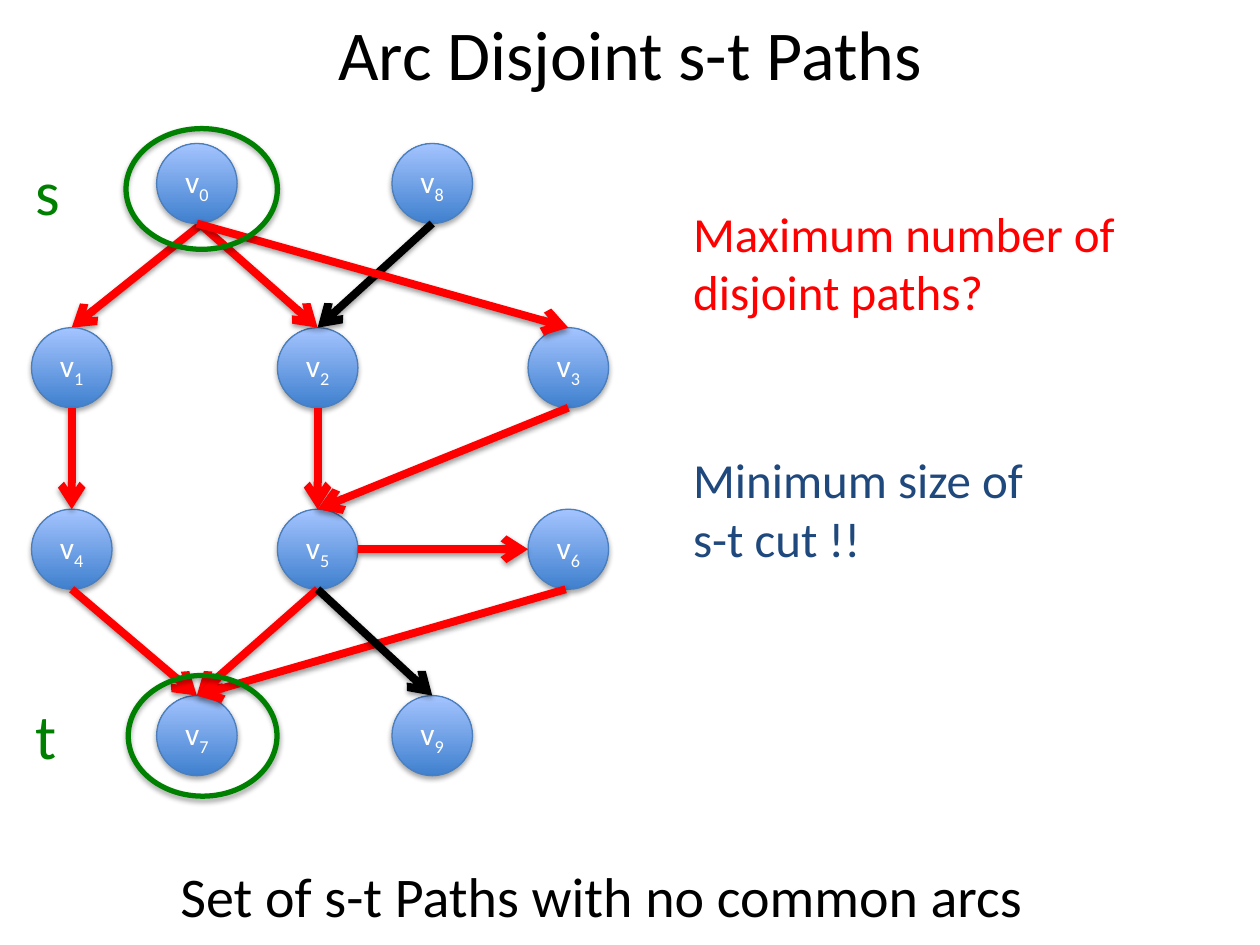
from lxml.etree import SubElement
from pptx import Presentation
from pptx.dml.color import RGBColor
from pptx.enum.shapes import MSO_CONNECTOR, MSO_SHAPE
from pptx.enum.text import MSO_ANCHOR, MSO_AUTO_SIZE, PP_ALIGN
from pptx.oxml.ns import qn
from pptx.util import Pt

HUES = {"black": "000000", "white": "FFFFFF", "red": "FF0000", "green": "008000",
        "navy": "1F497D", "edge": "4B7EBC", "deep": "3F80CE", "pale": "A4C4FF"}
WIDE, HIGH = 46, 45.75  # node size


class Board:
    font = "Calibri"

    def __init__(self, slide):
        self.slide = slide

    def hue(self, name):
        return RGBColor.from_string(HUES[name])

    def stroke(self, line, hue, width):
        line.color.rgb = self.hue(hue)
        line.width = Pt(width)

    def shade(self, item, drop, alpha):
        props = item._element.spPr
        box = props.find(qn("a:effectLst"))
        if box is None:
            box = SubElement(props, qn("a:effectLst"))
        cast = SubElement(box, qn("a:outerShdw"), blurRad=str(Pt(3.1)), dist=str(Pt(drop)),
                          dir="5400000", rotWithShape="0")
        tint = SubElement(cast, qn("a:srgbClr"), val=HUES["black"])
        SubElement(tint, qn("a:alpha"), val=str(alpha * 1000))

    def oval(self, x, y, w, h, hue, width):
        item = self.slide.shapes.add_shape(MSO_SHAPE.OVAL, Pt(x), Pt(y), Pt(w), Pt(h))
        item.shadow.inherit = False
        self.stroke(item.line, hue, width)
        self.shade(item, 1.8, 35)
        return item

    def run(self, para, text, size, hue):
        run = para.add_run()
        run.text = text
        run.font.name = self.font
        run.font.size = Pt(size)
        run.font.color.rgb = self.hue(hue)
        return run

    def node(self, num, mid, top):
        item = self.oval(mid - WIDE / 2, top, WIDE, HIGH, "edge", 0.75)
        item.fill.gradient()
        item.fill.gradient_angle = 90
        for stop, hue in zip(item.fill.gradient_stops, ("deep", "pale")):
            stop.color.rgb = self.hue(hue)
        frame = item.text_frame
        frame.vertical_anchor = MSO_ANCHOR.MIDDLE
        para = frame.paragraphs[0]
        para.alignment = PP_ALIGN.CENTER
        self.run(para, "v", 18, "white")
        sub = self.run(para, str(num), 18, "white")
        sub._r.get_or_add_rPr().set("baseline", "-25000")

    def ring(self, x, y, w, h):
        item = self.oval(x, y, w, h, "green", 3)
        item.rotation = 90
        item.fill.background()

    def arrow(self, start, end, hue):
        points = [Pt(n) for n in (*start, *end)]
        item = self.slide.shapes.add_connector(MSO_CONNECTOR.STRAIGHT, *points)
        self.stroke(item.line, hue, 4.5)
        SubElement(item.line._get_or_add_ln(), qn("a:tailEnd"), type="arrow")
        self.shade(item, 1.6, 38)

    def text(self, x, y, w, h, lines, size, hue, wrap=False, title=False):
        box = self.slide.shapes.add_textbox(Pt(x), Pt(y), Pt(w), Pt(h))
        frame = box.text_frame
        frame.word_wrap = wrap
        if title:
            frame.vertical_anchor = MSO_ANCHOR.MIDDLE
        else:
            frame.auto_size = MSO_AUTO_SIZE.SHAPE_TO_FIT_TEXT
        for i, line in enumerate(lines):
            para = frame.add_paragraph() if i else frame.paragraphs[0]
            if title:
                para.alignment = PP_ALIGN.CENTER
            self.run(para, line, size, hue)


# Node number: centre x, top y
ROWS = (82, 187.25, 291, 397.5)
COLS = (41, 181.5, 324.75)
LEFT, RIGHT = 112.5, 247
NODES = {8: (RIGHT, ROWS[0]), 0: (LEFT, ROWS[0])}
NODES.update({1 + i: (x, ROWS[1]) for i, x in enumerate(COLS)})
NODES.update({4 + i: (x, ROWS[2]) for i, x in enumerate(COLS)})
NODES.update({9: (RIGHT, ROWS[3]), 7: (LEFT, ROWS[3])})

# Arcs: from, to, colour, shift of the start
ARCS = [(0, 1, "red", 3), (1, 4, "red", 0), (4, 7, "red", 0), (0, 2, "red", 1.5),
        (2, 5, "red", 0), (5, 7, "red", 0), (5, 6, "red", 0), (8, 2, "black", 0),
        (0, 3, "red", 0), (6, 7, "red", -1.5), (3, 5, "red", 0), (5, 9, "black", 0)]


def link(board, tail, head, hue, shift):
    (x1, y1), (x2, y2) = NODES[tail], NODES[head]
    if y1 == y2:  # side to side
        mid = y1 + HIGH / 2
        board.arrow((x1 + WIDE / 2, mid), (x2 - WIDE / 2, mid), hue)
    else:  # bottom to top
        board.arrow((x1 + shift, y1 + HIGH), (x2, y2), hue)


def main():
    deck = Presentation()
    deck.slide_width, deck.slide_height = Pt(720), Pt(540)
    board = Board(deck.slides.add_slide(deck.slide_layouts[6]))

    # Title
    board.text(36, 4.5, 648, 51, ["Arc Disjoint s-t Paths"], 40, "black", True, True)

    # Graph: the first arc lies behind the nodes
    link(board, *ARCS[0])
    for num, (mid, top) in NODES.items():
        board.node(num, mid, top)
    for arc in ARCS[1:]:
        link(board, *arc)

    # Source and sink
    board.ring(81.25, 378, 69, 85)
    board.text(13, 394.5, 99, 51, ["t"], 36, "green", True)
    board.ring(80.75, 64.75, 69, 86.5)
    board.text(13, 83.5, 99, 51, ["s"], 36, "green", True)

    # Remarks
    board.text(389, 112.5, 272, 75, ["Maximum number of", "disjoint paths?"], 28, "red")
    board.text(389, 253.5, 219, 75, ["Minimum size of", "s-t cut !!"], 28, "navy")
    board.text(96, 489, 551.5, 46, ["Set of s-t Paths with no common arcs"], 32, "black")

    deck.save("out.pptx")


if __name__ == "__main__":
    main()
